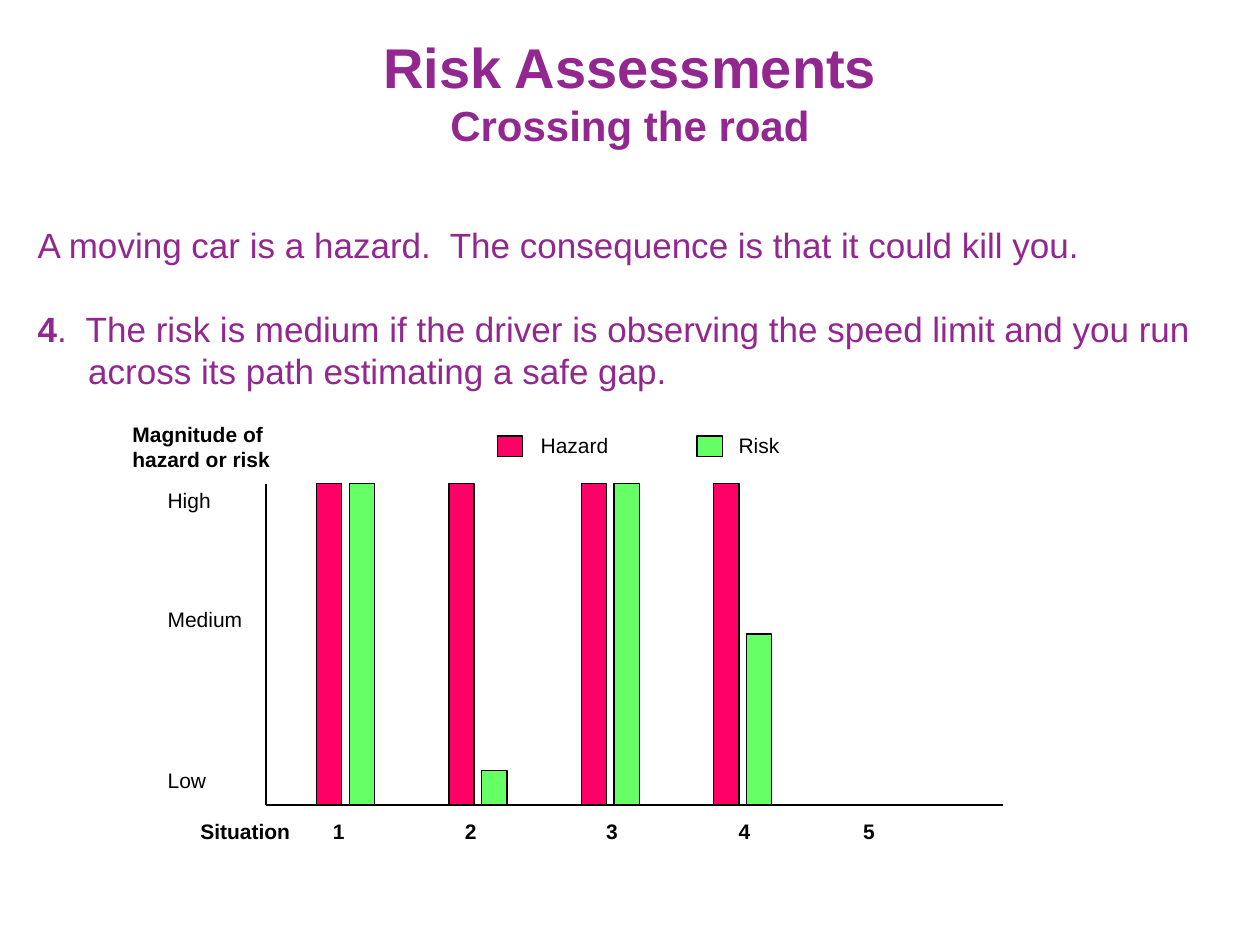
from lxml import etree
from pptx import Presentation
from pptx import util as u
from pptx.dml.color import RGBColor
from pptx.enum import shapes, text
from pptx.oxml import ns

PURPLE = RGBColor(0x92, 0x27, 0x8F)
BLACK = RGBColor(0, 0, 0)
PINK = RGBColor(0xFF, 0x00, 0x66)
GREEN = RGBColor(0x66, 0xFF, 0x66)

deck = Presentation()
deck.slide_width = u.Cm(25.4)
deck.slide_height = u.Cm(19.05)
slide = deck.slides.add_slide(deck.slide_layouts[6])


def write(para, words, size, color, bold=False):
    run = para.add_run()
    run.text = words
    run.font.name = "Arial"
    run.font.size = u.Pt(size)
    run.font.bold = bold
    run.font.color.rgb = color


def block(left, top, width, height, color):
    rect = slide.shapes.add_shape(
        shapes.MSO_SHAPE.RECTANGLE,
        u.Cm(left), u.Cm(top), u.Cm(width), u.Cm(height))
    rect.shadow.inherit = False
    rect.fill.solid()
    rect.fill.fore_color.rgb = color
    rect.line.color.rgb = BLACK
    rect.line.width = u.Pt(0.75)


title = slide.shapes.add_textbox(u.Cm(7.47), u.Cm(0.53), u.Cm(10.46), u.Cm(2.62))
frame = title.text_frame
frame.word_wrap = False
frame.auto_size = text.MSO_AUTO_SIZE.SHAPE_TO_FIT_TEXT
head = frame.paragraphs[0]
write(head, "Risk Assessments", 32, PURPLE, True)
sub = frame.add_paragraph()
write(sub, "Crossing the road", 24, PURPLE, True)
for para in (head, sub):
    para.alignment = text.PP_ALIGN.CENTER

body = slide.shapes.add_textbox(u.Cm(0.51), u.Cm(4.39), u.Cm(24.41), u.Cm(5.26))
frame = body.text_frame
frame.word_wrap = True
intro = frame.paragraphs[0]
write(intro, "A moving car is a hazard.  The consequence is that it could kill you.", 20, PURPLE)
case = frame.add_paragraph()
case.space_before = u.Pt(24)
write(case, "4", 20, PURPLE, True)
write(case, ".  The risk is medium if the driver is observing the speed limit "
      "and you run across its path estimating a safe gap.", 20, PURPLE)
for para in (intro, case):
    props = para._p.get_or_add_pPr()
    props.set("marL", str(u.Cm(1.02)))
    props.set("indent", str(-u.Cm(1.02)))

left, right, top, base = 5.36, 20.22, 9.75, 16.23
for x, y in ((left, top), (right, base)):
    axis = slide.shapes.add_connector(
        shapes.MSO_CONNECTOR.STRAIGHT, u.Cm(x), u.Cm(y), u.Cm(left), u.Cm(base))
    axis.line.color.rgb = BLACK
    axis.line.width = u.Pt(0.75)
    etree.SubElement(axis._element.spPr, ns.qn("a:effectLst"))

full = base - top
for color, start, highs in (
    (PINK, 6.38, (full, full, full, full)),
    (GREEN, 7.04, (full, 0.69, full, 3.45)),
):
    for i, high in enumerate(highs):
        block(start + 2.67 * i, base - high, 0.51, high, color)

block(10.03, 8.79, 0.51, 0.41, PINK)
block(14.05, 8.79, 0.51, 0.41, GREEN)

labels = [
    (("Magnitude of", "hazard or risk"), 2.49, 8.41, 4.62, 1.22, True),
    (("High",), 3.2, 9.75, 2.11, 0.71, False),
    (("Medium",), 3.2, 12.14, 2.9, 0.71, False),
    (("Low",), 3.2, 15.39, 1.98, 0.71, False),
    (("Hazard",), 10.72, 8.64, 2.72, 0.71, False),
    (("Risk",), 14.71, 8.64, 2.06, 0.71, False),
    (("Situation",), 3.86, 16.43, 3.12, 0.71, True),
]
for num, x in enumerate((6.53, 9.19, 12.04, 14.71, 17.22), 1):
    labels.append(((str(num),), x, 16.43, 0.71, 0.71, True))

for lines, x, y, wide, high, bold in labels:
    box = slide.shapes.add_textbox(u.Cm(x), u.Cm(y), u.Cm(wide), u.Cm(high))
    frame = box.text_frame
    frame.word_wrap = True
    frame.margin_left = frame.margin_right = u.Cm(0.18)
    frame.margin_top = frame.margin_bottom = u.Cm(0.08)
    for i, line in enumerate(lines):
        para = frame.add_paragraph() if i else frame.paragraphs[0]
        write(para, line, 12, BLACK, bold)

deck.save("out.pptx")
